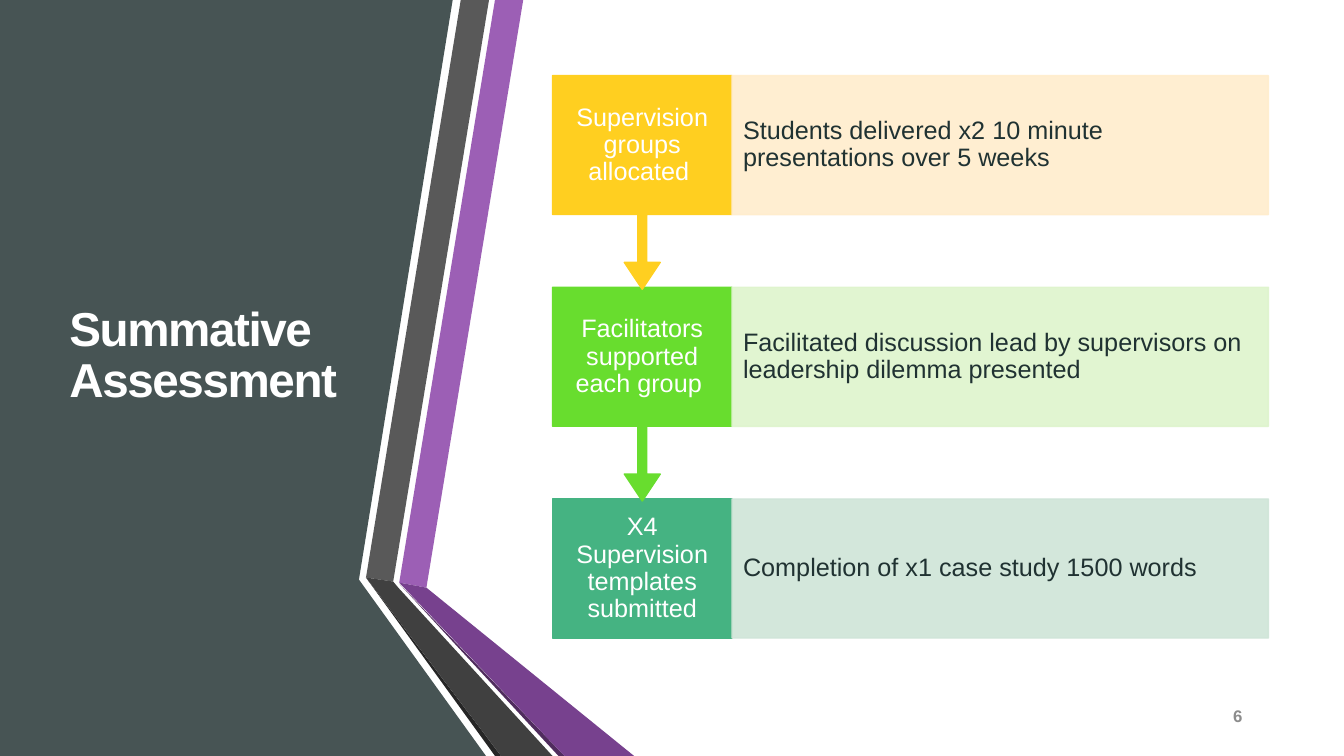
from lxml import etree
from pptx import Presentation
from pptx.dml.color import RGBColor
from pptx.enum.shapes import MSO_SHAPE
from pptx.enum.text import MSO_ANCHOR, PP_ALIGN
from pptx.oxml.ns import qn
from pptx.util import Pt

PX = 9144
RECT = MSO_SHAPE.RECTANGLE
CALLOUT = MSO_SHAPE.UP_ARROW_CALLOUT
MIDDLE = MSO_ANCHOR.MIDDLE
LEFT, CENTER, RIGHT = PP_ALIGN.LEFT, PP_ALIGN.CENTER, PP_ALIGN.RIGHT

PANEL = ("475454", [(0, 0), (449, 0), (356, 575), (482, 750), (0, 750)])
BANDS = [
    ("9C5FB5", [(396, 578), (423, 583), (519, 0), (491, 0)]),
    ("595959", [(485, 0), (457, 0), (363, 573), (390, 577)]),
    ("262626", [(363, 573), (491, 750), (497, 750)]),
    ("502C5E", [(396, 579), (554, 750), (560, 750)]),
    ("77418E", [(396, 578), (560, 750), (629, 750), (423, 583)]),
    ("404040", [(363, 573), (497, 750), (548, 750), (395, 583), (390, 577)]),
]
STEPS = [
    ("Supervision groups allocated ",
     "Students delivered x2 10 minute presentations over 5 weeks",
     "FFCF20", "FFEDCC"),
    ("Facilitators supported each group ",
     "Facilitated discussion lead by supervisors on leadership dilemma presented",
     "68DD2E", "DEF4CC"),
    ("X4 Supervision templates submitted",
     "Completion of x1 case study 1500 words",
     "45B382", "CFE5D8"),
]


def color(code):
    return RGBColor.from_string(code)


def emu(box):
    return [n * PX for n in box]


def paint(shape, code, line=False, alpha=None):
    shape.shadow.inherit = False
    shape.fill.solid()
    shape.fill.fore_color.rgb = color(code)
    if line:
        shape.line.color.rgb = color(code)
        shape.line.width = Pt(1)
    else:
        shape.line.fill.background()
    if alpha:
        for tint in shape.element.spPr.iter(qn("a:srgbClr")):
            etree.SubElement(tint, qn("a:alpha")).set("val", str(alpha * 1000))


def write(slide, box, text, size, code, align=LEFT, pads=(10, 5, 10, 5),
          space=0.9, bold=False, track=None):
    frame = slide.shapes.add_textbox(*emu(box)).text_frame
    left, top, right, low = emu(pads)
    form = {"word_wrap": True, "vertical_anchor": MIDDLE,
            "margin_left": left, "margin_top": top,
            "margin_right": right, "margin_bottom": low}
    for name, value in form.items():
        setattr(frame, name, value)
    para = frame.paragraphs[0]
    para.alignment = align
    para.line_spacing = space
    run = para.add_run()
    run.text = text
    for name, value in {"name": "Arial", "size": Pt(size), "bold": bold}.items():
        setattr(run.font, name, value)
    run.font.color.rgb = color(code)
    if track:
        run.font._element.set("spc", str(track))


def draw(slide, box, code, points):
    x, y = box[:2]
    spots = [(x + a, y + b) for a, b in points]
    form = slide.shapes.build_freeform(*spots[0], scale=PX)
    form.add_line_segments(spots[1:], close=True)
    paint(form.convert_to_shape(), code)


def side(slide, box):
    x, y = box[:2]
    for code, points in [PANEL] + BANDS:
        draw(slide, box, code, points)
    write(slide, (x + 59, y + 75, 304, 558), "Summative Assessment", 34, "FFFFFF",
          bold=True, track=-100)


def step(slide, box, item, last):
    x, y, w, h = box
    head, body, dark, pale = item
    wide = 178
    tall = h if last else 212
    block = slide.shapes.add_shape(RECT if last else CALLOUT,
                                   *emu((x, y, wide, tall)))
    if not last:
        block.rotation = 180
        for i, value in enumerate((0.05, 0.1, 0.15, 0.65)):
            block.adjustments[i] = value
    paint(block, dark, line=True)
    write(slide, (x, y, wide, h), head, 18, "FFFFFF", CENTER, (13, 14, 13, 14))
    rest = (x + wide, y, w - wide, h)
    paint(slide.shapes.add_shape(RECT, *emu(rest)), pale, line=True, alpha=90)
    write(slide, rest, body, 18, "203232", pads=(11, 25, 15, 25))


def flow(slide, box):
    x, y, w, h = box
    high = 138
    end = len(STEPS) - 1
    pitch = (h - high) // end
    for i in range(end, -1, -1):
        step(slide, (x, y + i * pitch, w, high), STEPS[i], i == end)


def main():
    deck = Presentation()
    deck.slide_width, deck.slide_height = emu((1333, 750))
    slide = deck.slides.add_slide(deck.slide_layouts[6])
    side(slide, (0, 0, 629, 750))
    write(slide, (1123, 690, 119, 40), "6", 12, "8C8C8C", RIGHT, space=1.0, bold=True)
    flow(slide, (548, 75, 710, 558))
    deck.save("out.pptx")


if __name__ == "__main__":
    main()
